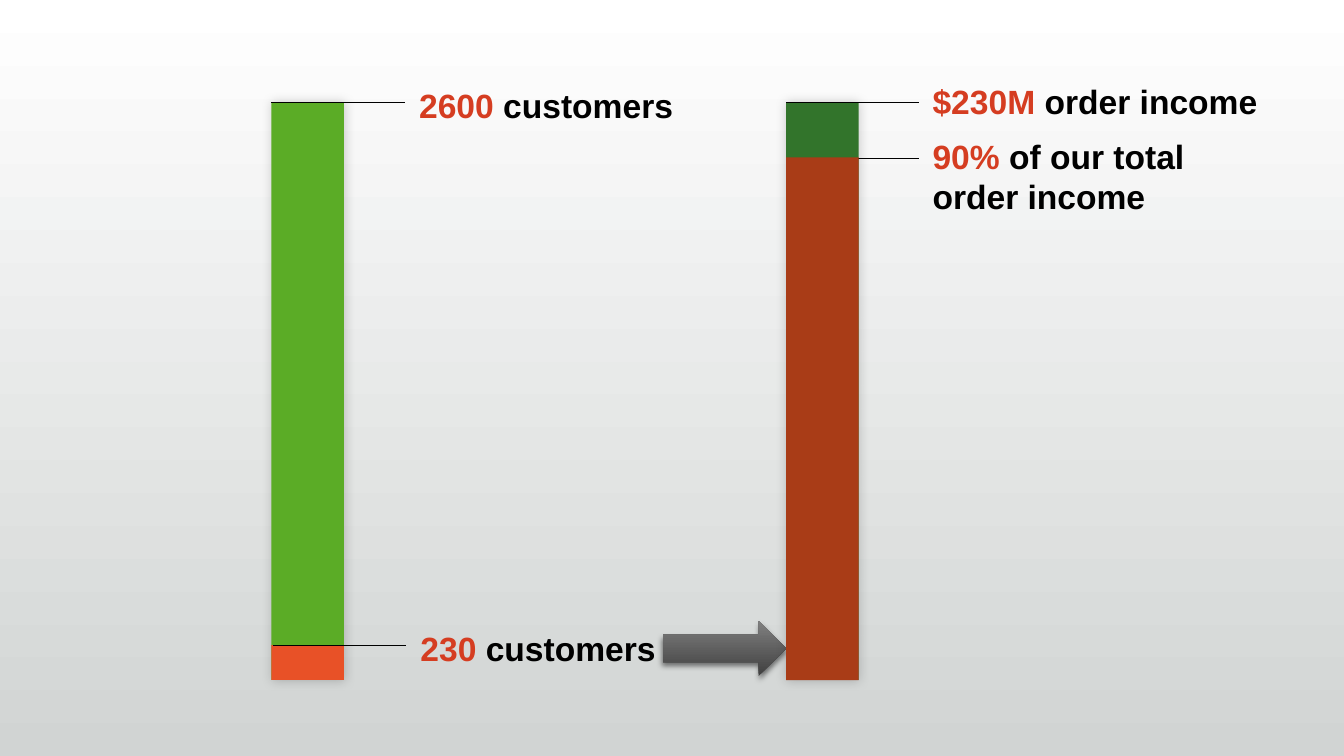
from lxml.etree import SubElement
from pptx import Presentation
from pptx.dml.color import RGBColor
from pptx.enum.shapes import MSO_CONNECTOR, MSO_SHAPE
from pptx.enum.text import MSO_AUTO_SIZE
from pptx.oxml.ns import qn
from pptx.util import Inches, Pt

BLACK = RGBColor(0x00, 0x00, 0x00)
WHITE = RGBColor(0xFF, 0xFF, 0xFF)
SILVER = RGBColor(0xD1, 0xD4, 0xD3)
DARK = RGBColor(0x40, 0x40, 0x40)
GRAY = RGBColor(0x80, 0x80, 0x80)
LIME = RGBColor(0x5B, 0xAC, 0x26)
GREEN = RGBColor(0x32, 0x74, 0x2B)
ORANGE = RGBColor(0xE8, 0x51, 0x27)
RUST = RGBColor(0xA9, 0x3C, 0x17)
RED = RGBColor(0xD5, 0x3D, 0x21)


def blend(fill, colors, angle):
    """Give a fill a two-colour gradient."""
    fill.gradient()
    fill.gradient_angle = angle
    for stop, color in zip(fill.gradient_stops, colors):
        stop.color.rgb = color


def shade(shape, alpha, blur, dist, angle):
    """Add an outer black shadow to a shape."""
    effects = shape._element.spPr.find(qn("a:effectLst"))
    outer = SubElement(effects, qn("a:outerShdw"), blurRad=str(Pt(blur)),
                       dist=str(Pt(dist)), dir=str(angle * 60000),
                       algn="ctr", rotWithShape="0")
    color = SubElement(outer, qn("a:srgbClr"), val="000000")
    SubElement(color, qn("a:alpha"), val=str(alpha * 1000))


def block(slide, kind, box, color=None):
    """Draw a shape with no outline and no shadow."""
    shape = slide.shapes.add_shape(kind, *map(Inches, box))
    shape.shadow.inherit = False
    shape.line.fill.background()
    if color is not None:
        shape.fill.solid()
        shape.fill.fore_color.rgb = color
    return shape


def leader(slide, left, top):
    """Draw a thin level line from a bar towards its label."""
    line = slide.shapes.add_connector(
        MSO_CONNECTOR.STRAIGHT, Inches(left), Inches(top),
        Inches(left + 0.99), Inches(top))
    line.line.color.rgb = BLACK
    line.line.width = Pt(0.25)
    SubElement(line._element.spPr, qn("a:effectLst"))


def label(slide, box, figure, lines, wrap=False):
    """Write a red figure followed by black words."""
    frame = slide.shapes.add_textbox(*map(Inches, box)).text_frame
    frame.word_wrap = wrap
    frame.auto_size = MSO_AUTO_SIZE.SHAPE_TO_FIT_TEXT
    para = frame.paragraphs[0]
    para.add_run().text = figure
    for i, words in enumerate(lines):
        if i:
            para.add_line_break()
        para.add_run().text = words
    for i, run in enumerate(para.runs):
        run.font.name = "Arial"
        run.font.size = Pt(18)
        run.font.bold = True
        run.font.color.rgb = BLACK if i else RED


def column(slide, box, colors, share, over):
    """Draw a bar, the share at its foot, and a leader for each."""
    left, top, width, height = box
    bar = block(slide, MSO_SHAPE.RECTANGLE, box, colors[0])
    shade(bar, 20, 6, 0, 315)
    edge = top + height - share
    if not over:
        leader(slide, left, edge + 0.01)
    block(slide, MSO_SHAPE.RECTANGLE, (left, edge, width, share), colors[1])
    if over:
        leader(slide, left + 0.01, edge)
    leader(slide, left, top)


def arrow(slide, box):
    """Draw the gray arrow that links the two bars."""
    shape = block(slide, MSO_SHAPE.RIGHT_ARROW, box)
    blend(shape.fill, (DARK, GRAY), 90)
    shade(shape, 51, 3.1, 1.8, 90)


def main():
    """Build the slide and save it."""
    deck = Presentation()
    deck.slide_width, deck.slide_height = Inches(10), Inches(5.625)
    slide = deck.slides.add_slide(deck.slide_layouts[6])
    blend(slide.background.fill, (WHITE, SILVER), 270)

    column(slide, (2.02, 0.76, 0.54, 4.3), (LIME, ORANGE), 0.26, True)
    label(slide, (3.02, 0.58, 2.18, 0.4), "2600 ", ["customers"])
    label(slide, (3.03, 4.62, 2.04, 0.4), "230 ", ["customers"])
    arrow(slide, (4.93, 4.62, 0.92, 0.41))
    column(slide, (5.85, 0.76, 0.54, 4.3), (GREEN, RUST), 3.89, False)
    label(slide, (6.84, 0.55, 2.71, 0.4), "$230M ", ["order income"])
    label(slide, (6.84, 0.96, 2.41, 0.71), "90% ",
          ["of our total ", "order income"], True)
    deck.save("out.pptx")


if __name__ == "__main__":
    main()
